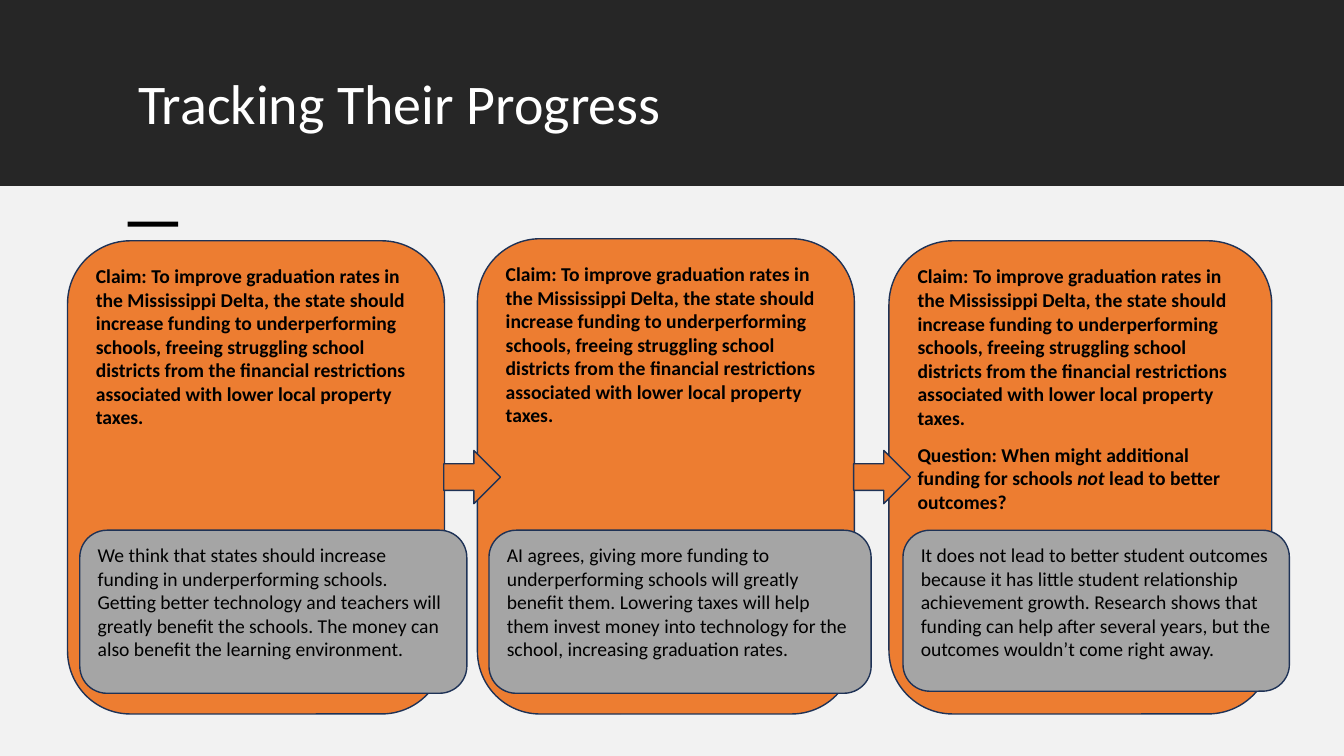
from dataclasses import dataclass

from pptx import Presentation
from pptx.dml.color import RGBColor as RGB
from pptx.enum.shapes import MSO_SHAPE as Shape
from pptx.enum.text import MSO_ANCHOR as Anchor, MSO_AUTO_SIZE as AutoSize, PP_ALIGN as Align
from pptx.util import Pt


@dataclass(frozen=True)
class Theme:
    font: str = "Calibri"
    title_size: int = 40
    body_size: int = 14
    white: RGB = RGB(0xFF, 0xFF, 0xFF)
    black: RGB = RGB(0, 0, 0)
    band: RGB = RGB(0x26, 0x26, 0x26)
    page: RGB = RGB(0xF2, 0xF2, 0xF2)
    orange: RGB = RGB(0xED, 0x7D, 0x31)
    gray: RGB = RGB(0xA5, 0xA5, 0xA5)
    outline: RGB = RGB(0x1E, 0x32, 0x56)


T = Theme()
CLAIM = ("Claim: To improve graduation rates in the Mississippi Delta, the state should "
         "increase funding to underperforming schools, freeing struggling school districts "
         "from the financial restrictions associated with lower local property taxes.")
QUESTION = [("Question: When might additional funding for schools ", False),
            ("not", True), (" lead to better outcomes?", False)]

prs = Presentation()
prs.slide_width, prs.slide_height = Pt(960), Pt(540)
s = prs.slides.add_slide(prs.slide_layouts[5])


def add_box(kind, box, fill, outline=None):
    sp = s.shapes.add_shape(kind, *map(Pt, box))
    sp.shadow.inherit = False
    sp.fill.solid()
    sp.fill.fore_color.rgb = fill
    if outline is None:
        sp.line.fill.background()
    else:
        sp.line.color.rgb = outline
        sp.line.width = Pt(1)
    return sp


def write(sp, paragraphs, bold=False, size=T.body_size, color=T.black):
    """Fill a shape with paragraphs, each a list of (text, italic) runs."""
    tf = sp.text_frame
    tf.word_wrap = True
    tf.auto_size = AutoSize.NONE
    tf.vertical_anchor = Anchor.TOP
    for i, runs in enumerate(paragraphs):
        p = tf.add_paragraph() if i else tf.paragraphs[0]
        p.alignment = Align.LEFT
        p.space_before = Pt(9.75 if i else 0)
        for text, italic in runs:
            r = p.add_run()
            r.text = text
            r.font.color.rgb = color
            style = {"name": T.font, "size": Pt(size), "bold": bold, "italic": italic}
            for name, value in style.items():
                setattr(r.font, name, value)
    return tf


# Header, page and accent dash
title = s.shapes.title
header = add_box(Shape.RECTANGLE, (0, -0.75, 960, 133.5), T.band)
title._element.addprevious(header._element)
title.left, title.top, title.width, title.height = map(Pt, (91.5, 50.5, 778.5, 70.5))
tf = write(title, [[("Tracking Their Progress", False)]], size=T.title_size, color=T.white)
tf.paragraphs[0].line_spacing = 0.9
add_box(Shape.RECTANGLE, (0, 133, 960, 407), T.page)
add_box(Shape.RECTANGLE, (91.25, 158.25, 36, 3.75), T.black)

# Claim cards, each with a response overlapping its lower part
claim = [(CLAIM, False)]
steps = [
    ((48.25, 172, 269.25, 338), [claim], (57, 378.75, 276.5, 116.5),
     "We think that states should increase funding in underperforming schools. Getting "
     "better technology and teachers will greatly benefit the schools. The money can also "
     "benefit the learning environment."),
    ((341, 170.5, 269.25, 339.5), [claim], (349.25, 378.75, 273, 116.5),
     "AI agrees, giving more funding to underperforming schools will greatly benefit them. "
     "Lowering taxes will help them invest money into technology for the school, increasing "
     "graduation rates."),
    ((635, 172, 273.5, 338), [claim, QUESTION], (645, 378.75, 276, 115),
     "It does not lead to better student outcomes because it has little student relationship "
     "achievement growth. Research shows that funding can help after several years, but the "
     "outcomes wouldn’t come right away."),
]
for card_box, card_text, response_box, response in steps:
    card = add_box(Shape.ROUNDED_RECTANGLE, card_box, T.orange, T.outline)
    write(card, card_text, bold=True)
    reply = add_box(Shape.ROUNDED_RECTANGLE, response_box, T.gray, T.outline)
    write(reply, [[(response, False)]])

# Arrows between the cards
for left in (317, 609.75):
    add_box(Shape.RIGHT_ARROW, (left, 321.75, 40.5, 38), T.orange, T.outline)

prs.save("out.pptx")
